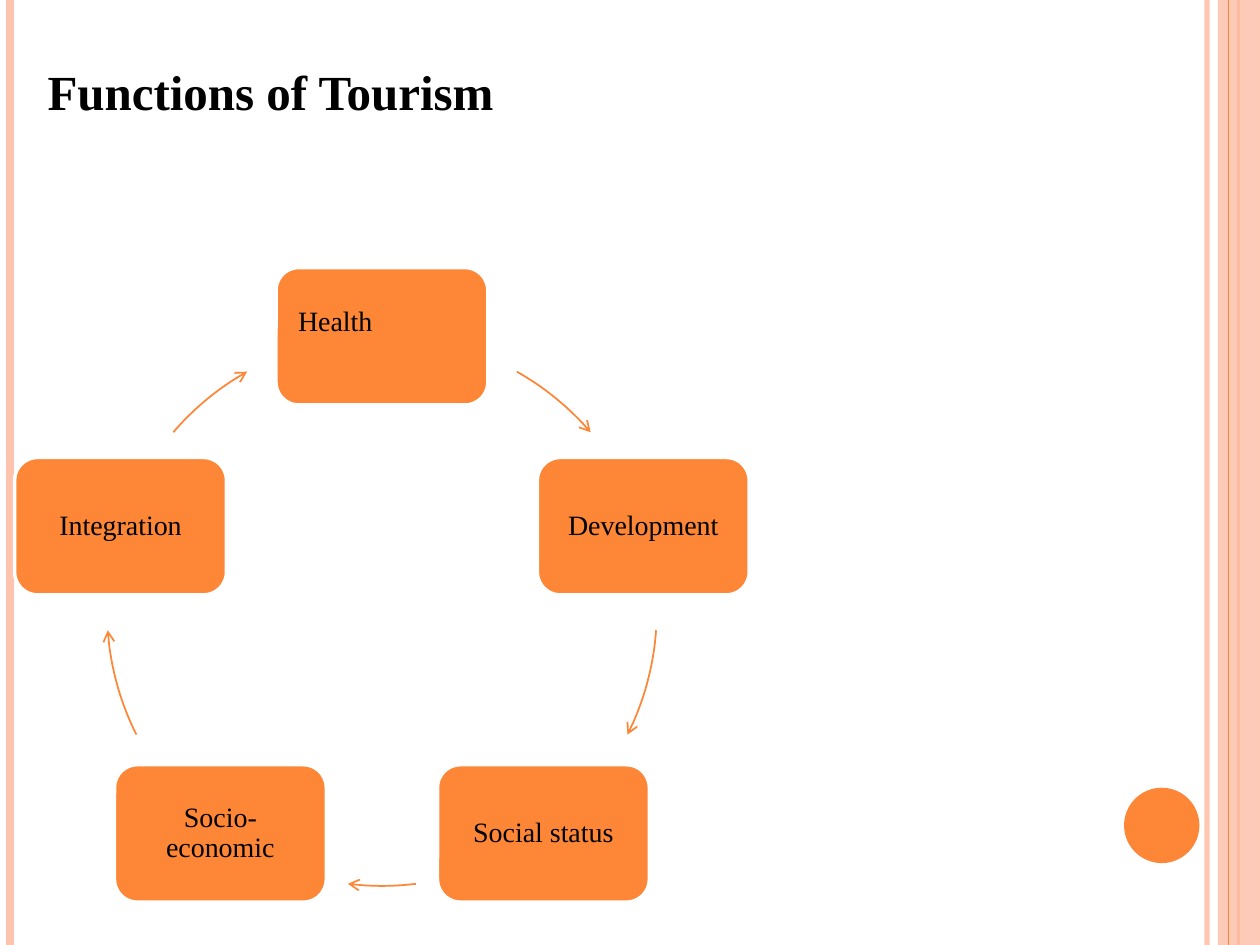
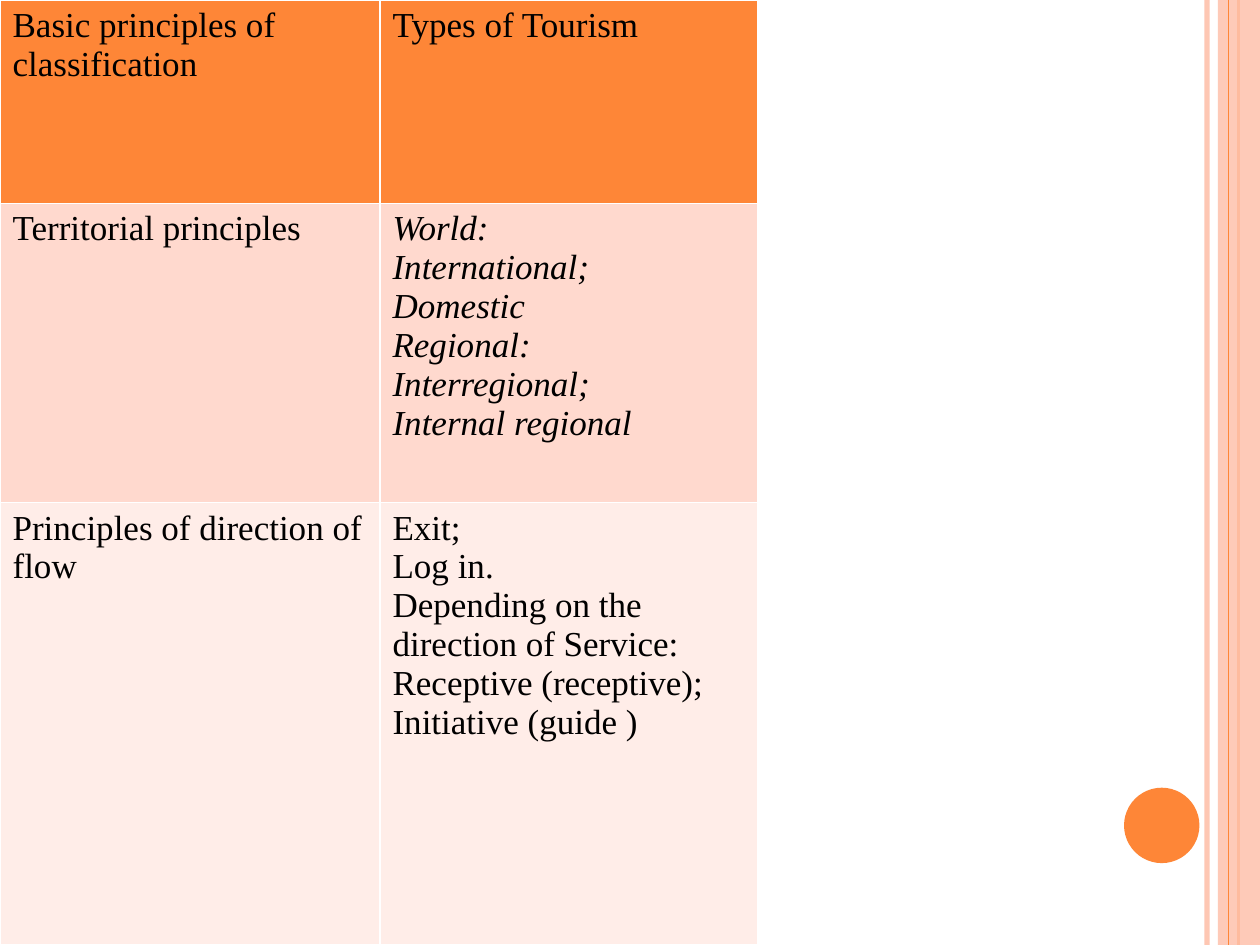
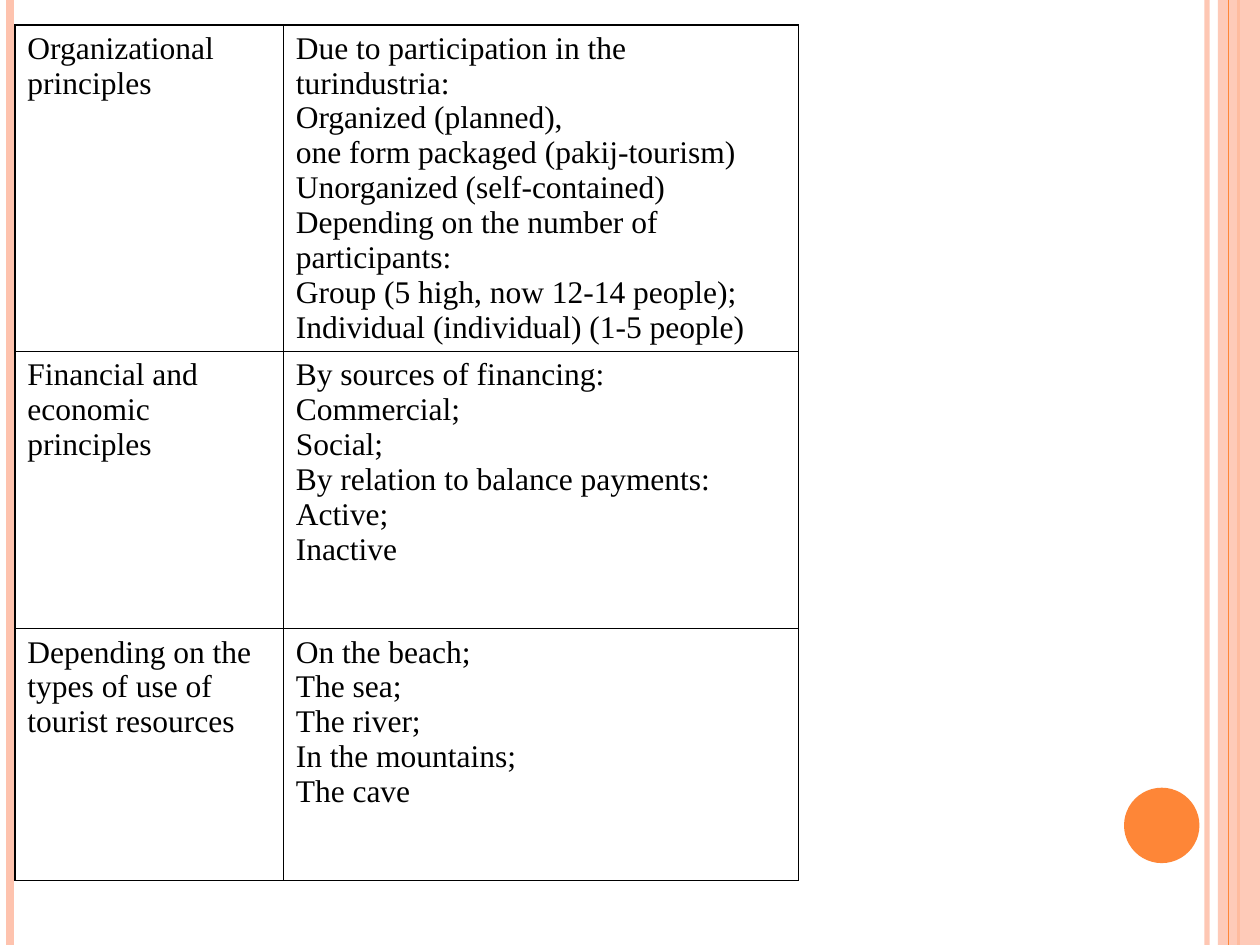
import math
from dataclasses import dataclass

import lxml.etree
import pptx
import pptx.dml.color
import pptx.enum.shapes
import pptx.enum.text
import pptx.oxml.ns
import pptx.util

Cm = pptx.util.Cm
Pt = pptx.util.Pt
qn = pptx.oxml.ns.qn
Kind = pptx.enum.shapes.MSO_SHAPE
Align = pptx.enum.text.PP_ALIGN
Anchor = pptx.enum.text.MSO_ANCHOR


@dataclass(frozen=True)
class Theme:
    font: str = "Times New Roman"
    ink: str = "000000"
    white: str = "FFFFFF"
    orange: str = "FE8637"
    peach: str = "FEC3AE"
    rose: str = "FFD9CE"
    blush: str = "FFEDE8"
    title: int = 28
    head: int = 20
    body: int = 18
    label: int = 16


THEME = Theme()
WIDTH, HEIGHT = 25.4, 19.05


@dataclass(frozen=True)
class Bar:
    x: float
    color: str
    points: float
    alpha: int = 100


@dataclass(frozen=True)
class Node:
    text: str
    align: Align = Align.CENTER
    lift: float = 0


@dataclass(frozen=True)
class Row:
    height: float
    left: str
    right: list[str]
    fill: str | None = None
    slant: bool = False


@dataclass(frozen=True)
class Grid:
    x: float
    y: float
    widths: tuple[float, float]
    rows: list[Row]
    size: int
    border: str


@dataclass(frozen=True)
class Ring:
    x: float = 7.7
    y: float = 12.32
    radius: float = 5.54
    width: float = 4.27
    height: float = 2.77
    inset: float = 0.31

    def point(self, angle: float) -> tuple[float, float]:
        turn = math.radians(angle)
        return self.x + self.radius * math.sin(turn), self.y - self.radius * math.cos(turn)


BARS = [
    Bar(24.33, THEME.peach, 3, 93),
    Bar(0.21, THEME.peach, 4.5),
    Bar(24.97, THEME.orange, 1.5),
]
EDGE = Bar(24.77, THEME.orange, 0.75)

NODES = [
    Node("Health", Align.LEFT, 0.56),
    Node("Development"),
    Node("Social status"),
    Node("Socio-economic"),
    Node("Integration"),
]
ARCS = [(29.4, 49.4), (94, 116.7), (172.9, 187.1), (243.3, 266), (310.6, 330.6)]
STEPS = 16

TYPES = Grid(0, 0, (7.66, 7.62), [
    Row(4.1, "Basic principles of classification", ["Types of Tourism"], THEME.orange),
    Row(6.03, "Territorial principles", [
        "World:",
        "International;",
        "Domestic",
        "Regional:",
        "Interregional;",
        "Internal regional",
    ], THEME.rose, True),
    Row(8.91, "Principles of direction of flow", [
        "Exit;",
        "Log in.",
        "Depending on the direction of Service:",
        "Receptive (receptive);",
        "Initiative (guide )",
    ], THEME.blush),
], THEME.head, THEME.white)

FORMS = Grid(0.3, 0.5, (5.41, 10.39), [
    Row(6.53, "Organizational principles", [
        "Due to participation in the turindustria:",
        "Organized (planned),",
        "one form packaged (pakij-tourism)",
        "Unorganized (self-contained)",
        "Depending on the number of participants:",
        "Group (5 high, now 12-14 people);",
        "Individual (individual) (1-5 people)",
    ]),
    Row(5.59, "Financial and economic principles", [
        "By sources of financing:",
        "Commercial;",
        "Social;",
        "By relation to balance payments:",
        "Active;",
        "Inactive",
    ]),
    Row(5.08, "Depending on the types of use of tourist resources", [
        "On the beach;",
        "The sea;",
        "The river;",
        "In the mountains;",
        "The cave",
    ]),
], THEME.body, THEME.ink)


def tint(color: str) -> pptx.dml.color.RGBColor:
    return pptx.dml.color.RGBColor.from_string(color)


def fade(node, alpha: int) -> None:
    if alpha < 100:
        color = next(node.iter(qn("a:srgbClr")))
        lxml.etree.SubElement(color, qn("a:alpha"), val=str(alpha * 1000))


def paint(shape, color: str) -> None:
    shape.shadow.inherit = False
    shape.fill.solid()
    shape.fill.fore_color.rgb = tint(color)
    shape.line.fill.background()


def stroke(shape, color: str, points: float):
    shape.line.color.rgb = tint(color)
    shape.line.width = Pt(points)
    return shape.element.spPr.find(qn("a:ln"))


def write(frame, lines: list[str], size: int, bold: bool = False,
          slant: bool = False, align: Align = Align.LEFT) -> None:
    for index, line in enumerate(lines):
        para = frame.add_paragraph() if index else frame.paragraphs[0]
        para.text = line
        para.alignment = align
        font = para.font
        font.name, font.size = THEME.font, Pt(size)
        font.bold, font.italic = bold, slant
        font.color.rgb = tint(THEME.ink)


def draw_bar(slide, bar: Bar) -> None:
    line = slide.shapes.add_connector(
        pptx.enum.shapes.MSO_CONNECTOR.STRAIGHT, Cm(bar.x), Cm(0), Cm(bar.x), Cm(HEIGHT))
    fade(stroke(line, bar.color, bar.points), bar.alpha)
    lxml.etree.SubElement(line.element.spPr, qn("a:effectLst"))


def draw_frame(slide) -> None:
    for bar in BARS:
        draw_bar(slide, bar)
    band = slide.shapes.add_shape(Kind.RECTANGLE, Cm(24.55), Cm(0), Cm(0.85), Cm(HEIGHT))
    paint(band, THEME.peach)
    fade(band.element.spPr, 87)
    draw_bar(slide, EDGE)
    dot = slide.shapes.add_shape(Kind.OVAL, Cm(22.66), Cm(15.88), Cm(1.52), Cm(1.52))
    paint(dot, THEME.orange)


def draw_title(slide, text: str) -> None:
    box = slide.shapes.add_textbox(Cm(0.71), Cm(1.12), Cm(9.6), Cm(1.45))
    box.text_frame.word_wrap = False
    write(box.text_frame, [text], THEME.title, bold=True)


def draw_node(slide, ring: Ring, node: Node, angle: float) -> None:
    x, y = ring.point(angle)
    box = slide.shapes.add_shape(
        Kind.ROUNDED_RECTANGLE, Cm(x - ring.width / 2), Cm(y - ring.height / 2),
        Cm(ring.width), Cm(ring.height))
    paint(box, THEME.orange)
    stroke(box, THEME.white, 2)
    frame = box.text_frame
    frame.word_wrap = True
    frame.vertical_anchor = Anchor.MIDDLE
    frame.margin_left = frame.margin_right = frame.margin_top = Cm(ring.inset)
    frame.margin_bottom = Cm(ring.inset + node.lift)
    write(frame, [node.text], THEME.label, align=node.align)
    frame.paragraphs[0].line_spacing = 0.9


def draw_arc(slide, ring: Ring, start: float, end: float) -> None:
    angles = [start + (end - start) * step / STEPS for step in range(STEPS + 1)]
    first, *rest = [(Cm(x), Cm(y)) for x, y in map(ring.point, angles)]
    path = slide.shapes.build_freeform(*first)
    path.add_line_segments(rest, close=False)
    arc = path.convert_to_shape()
    arc.shadow.inherit = False
    arc.fill.background()
    line = stroke(arc, THEME.orange, 1)
    lxml.etree.SubElement(line, qn("a:tailEnd"), type="arrow")


def draw_cycle(slide) -> None:
    ring = Ring()
    for index, (node, arc) in enumerate(zip(NODES, ARCS)):
        draw_node(slide, ring, node, index * 360 / len(NODES))
        draw_arc(slide, ring, *arc)


def edge_cell(cell, color: str) -> None:
    props = cell._tc.get_or_add_tcPr()
    for side in "LRTB":
        line = lxml.etree.SubElement(props, qn(f"a:ln{side}"), w=str(Pt(1)))
        fill = lxml.etree.SubElement(line, qn("a:solidFill"))
        lxml.etree.SubElement(fill, qn("a:srgbClr"), val=color)


def draw_grid(slide, grid: Grid) -> None:
    table = slide.shapes.add_table(
        len(grid.rows), len(grid.widths), Cm(grid.x), Cm(grid.y), Cm(sum(grid.widths)),
        Cm(sum(row.height for row in grid.rows))).table
    table.first_row = table.horz_banding = False
    for column, width in zip(table.columns, grid.widths):
        column.width = Cm(width)
    for index, row in enumerate(grid.rows):
        table.rows[index].height = Cm(row.height)
        for side, lines in enumerate(([row.left], row.right)):
            cell = table.cell(index, side)
            edge_cell(cell, grid.border)
            if row.fill:
                cell.fill.solid()
                cell.fill.fore_color.rgb = tint(row.fill)
            else:
                cell.fill.background()
            write(cell.text_frame, lines, grid.size, slant=row.slant and side == 1)


def main() -> None:
    deck = pptx.Presentation()
    deck.slide_width, deck.slide_height = Cm(WIDTH), Cm(HEIGHT)
    slides = [deck.slides.add_slide(deck.slide_layouts[6]) for _ in range(3)]
    for slide in slides:
        draw_frame(slide)
    cycle, types, forms = slides
    draw_cycle(cycle)
    draw_title(cycle, "Functions of Tourism")
    draw_grid(types, TYPES)
    draw_grid(forms, FORMS)
    deck.save("out.pptx")


if __name__ == "__main__":
    main()
